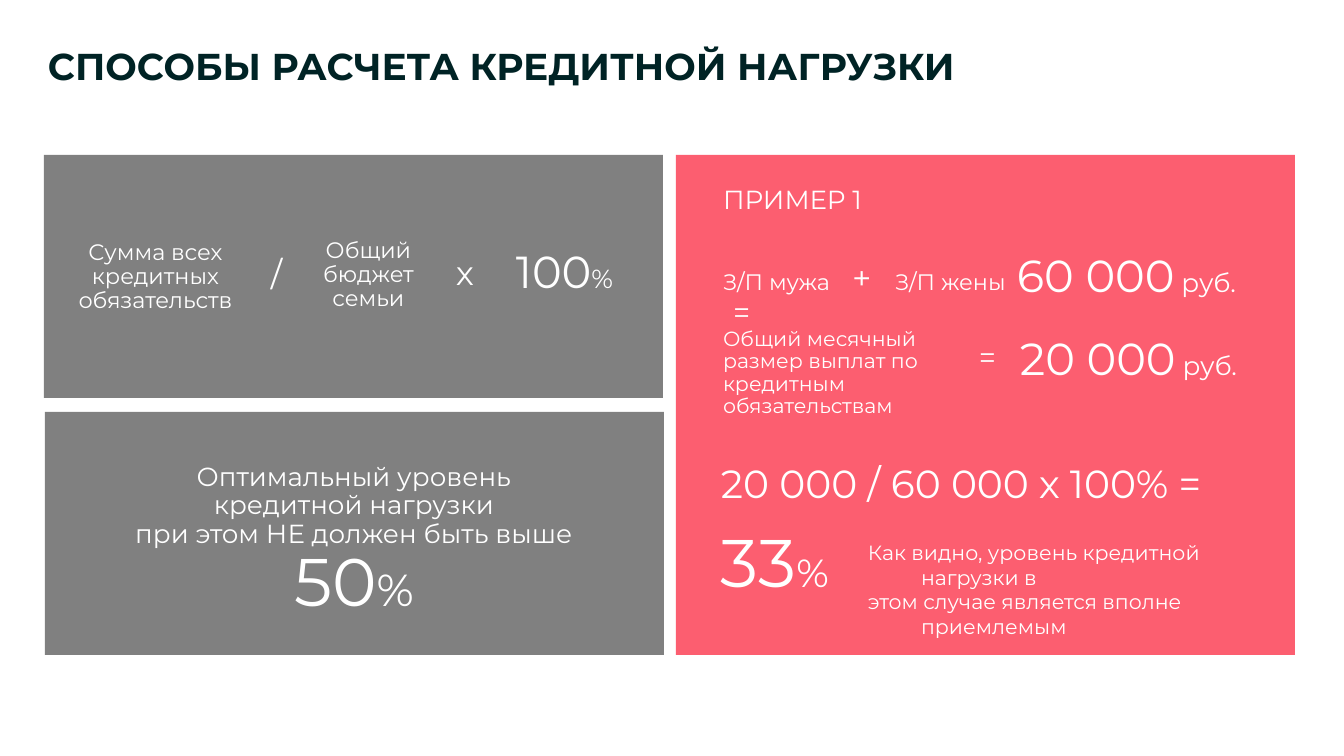
from copy import deepcopy

from lxml import etree
from pptx import Presentation
from pptx.dml.color import RGBColor
from pptx.enum import shapes, text
from pptx.oxml import ns
from pptx.util import Emu, Pt

EMU_PER_PX = 9144000 / 1344
FONT = "Montserrat"
WHITE, INK, GREY, CORAL = "FFFFFF", "002325", "808080", "FC5E70"
LEFT, CENTER, RIGHT = text.PP_ALIGN.LEFT, text.PP_ALIGN.CENTER, text.PP_ALIGN.RIGHT


def px(value):
    return Emu(round(value * EMU_PER_PX))


def color(hex_value):
    return RGBColor.from_string(hex_value)


def add_panel(slide, box, fill):
    panel = slide.shapes.add_shape(shapes.MSO_SHAPE.RECTANGLE, *map(px, box))
    panel.shadow.inherit = False
    panel.fill.solid()
    panel.fill.fore_color.rgb = color(fill)
    panel.line.fill.background()


def add_run(paragraph, content, size, ink, bold):
    """Write one run; each newline in content becomes a line break of the same size."""
    for index, line in enumerate(content.split("\n")):
        if index:
            paragraph.add_line_break()
            line_break = paragraph._p[-1]
            line_break.append(deepcopy(run._r.rPr))
        run = paragraph.add_run()
        run.text = line
        run.font.name, run.font.size, run.font.bold = FONT, Pt(size), bold
        run.font.color.rgb = color(ink)


def set_tabs(paragraph, stops):
    tab_list = etree.SubElement(paragraph._p.get_or_add_pPr(), ns.qn("a:tabLst"))
    for stop in stops:
        etree.SubElement(tab_list, ns.qn("a:tab"), pos=str(px(stop)), algn="l")


def set_hanging_indent(paragraph, indent):
    properties = paragraph._p.get_or_add_pPr()
    properties.set("marL", str(px(indent)))
    properties.set("indent", str(-px(indent)))


def write(holder, paragraphs, *, align=LEFT, ink=WHITE, bold=False, spacing=0.9,
          before=10, after=2, tabs=(), hanging=0, anchor=text.MSO_ANCHOR.TOP):
    """Fill a text holder; every paragraph is a list of (content, point size) runs."""
    frame = holder.text_frame
    frame.word_wrap = True
    frame.auto_size = text.MSO_AUTO_SIZE.SHAPE_TO_FIT_TEXT
    frame.vertical_anchor = anchor
    frame.margin_left = frame.margin_right = frame.margin_top = frame.margin_bottom = 0
    for index, runs in enumerate(paragraphs):
        paragraph = frame.add_paragraph() if index else frame.paragraphs[0]
        paragraph.alignment = align
        paragraph.line_spacing = spacing
        paragraph.space_before = Pt(before if index else 0)
        paragraph.space_after = Pt(after)
        if tabs:
            set_tabs(paragraph, tabs)
        if hanging:
            set_hanging_indent(paragraph, hanging)
        for content, size in runs:
            add_run(paragraph, content, size, ink, bold)


def add_text(slide, box, *paragraphs, **style):
    write(slide.shapes.add_textbox(*map(px, box)), paragraphs, **style)


def add_title(slide, box, content):
    title = slide.shapes.title
    title.left, title.top, title.width, title.height = map(px, box)
    write(title, [[(content, 20)]], ink=INK, bold=True, spacing=0.75, after=0,
          anchor=text.MSO_ANCHOR.BOTTOM)


def add_formula(slide):
    parts = [
        ((65, 241, 181, 74), [("Сумма всех кредитных обязательств", 12)]),
        ((220, 258, 113, 36), [("/", 18)]),
        ((284, 239, 169, 74), [("Общий\nбюджет\nсемьи", 12)]),
        ((411, 257, 108, 36), [("х", 18)]),
        ((496, 250, 137, 48), [("100", 24), ("%", 14)]),
    ]
    for box, runs in parts:
        add_text(slide, box, runs, align=CENTER)


def add_limit(slide):
    advice = "Оптимальный уровень\nкредитной нагрузки\nпри этом НЕ должен быть выше\n"
    add_text(slide, (44, 464, 620, 159), [(advice, 14), ("50", 36), ("%", 24)],
             align=CENTER)


def add_example(slide):
    add_text(slide, (723, 187, 391, 43), [("ПРИМЕР 1", 14)])
    add_text(slide, (723, 261, 290, 69),
             [("З/П мужа\t", 12), ("+\t", 18), ("З/П жены\n\t", 12), ("=", 16)],
             tabs=(10, 129, 172))
    add_text(slide, (723, 329, 262, 90),
             [("Общий месячный размер выплат по кредитным обязательствам", 11)])
    add_text(slide, (956, 343, 40, 32), [("=", 16)], align=RIGHT)
    for left, top, amount in ((1017, 254, "60 000"), (1020, 337, "20 000")):
        add_text(slide, (left, top, 251, 48), [(amount, 24), (" руб.", 14)])
    add_text(slide, (721, 465, 575, 138),
             [("20 000 / 60 000 х 100% =", 21)], [("33", 36), ("%", 21)])
    add_text(slide, (868, 540, 399, 99),
             [("Как видно, уровень кредитной нагрузки в", 11)],
             [("этом случае является вполне приемлемым", 11)],
             spacing=1, before=0, after=0, hanging=53)


def main():
    deck = Presentation()
    deck.slide_width, deck.slide_height = px(1344), px(756)
    slide = deck.slides.add_slide(deck.slide_layouts[5])
    add_title(slide, (48, 52, 1249, 35), "СПОСОБЫ РАСЧЕТА КРЕДИТНОЙ НАГРУЗКИ")
    add_panel(slide, (676, 155, 619, 500), CORAL)
    add_panel(slide, (44, 155, 619, 243), GREY)
    add_panel(slide, (45, 412, 619, 243), GREY)
    add_formula(slide)
    add_limit(slide)
    add_example(slide)
    deck.save("out.pptx")


if __name__ == "__main__":
    main()
